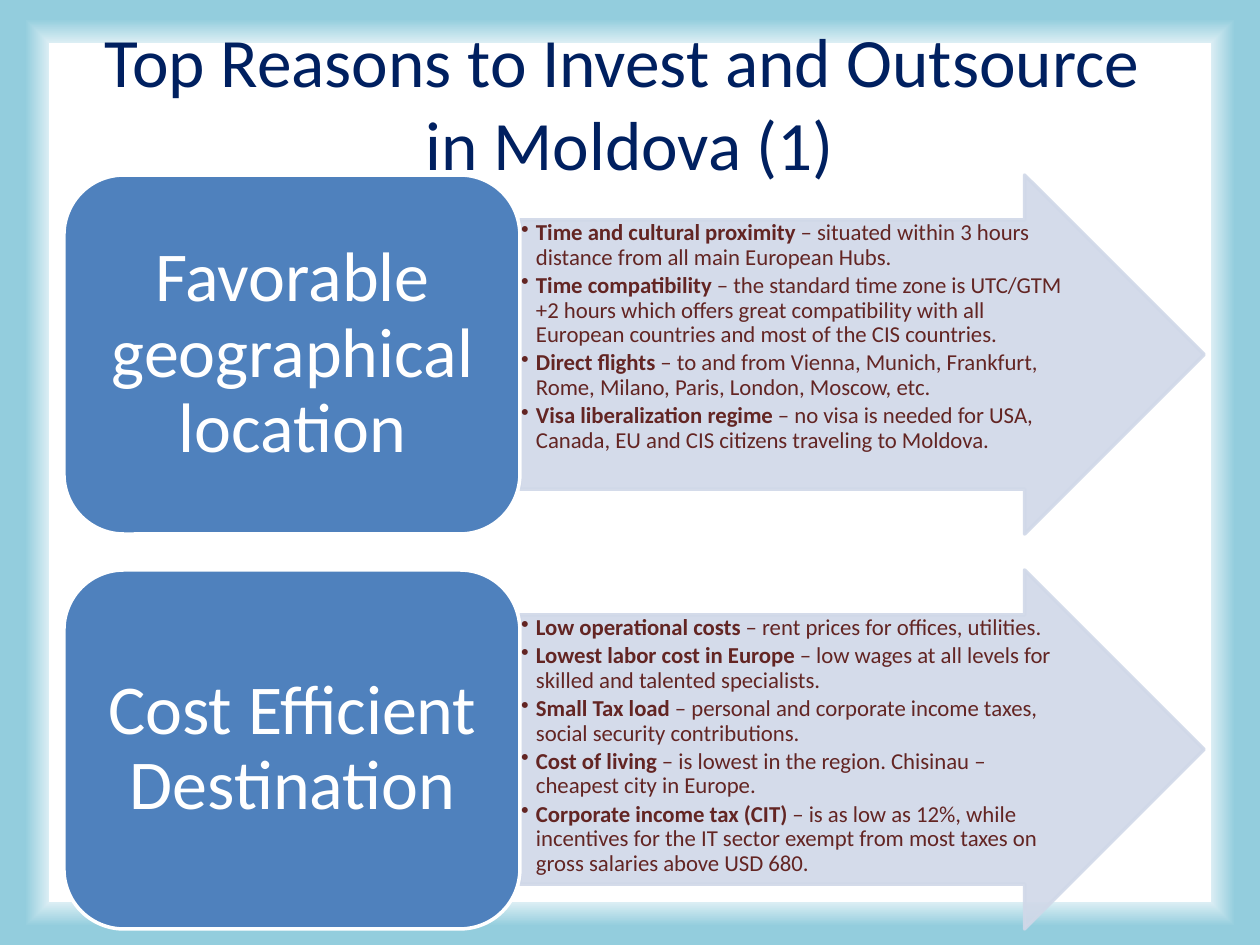
from lxml import etree
from pptx import Presentation
from pptx.dml.color import RGBColor
from pptx.enum.shapes import MSO_SHAPE
from pptx.enum.text import MSO_ANCHOR, MSO_AUTO_SIZE, PP_ALIGN
from pptx.oxml import parse_xml
from pptx.oxml.ns import nsdecls, qn
from pptx.util import Emu, Pt

ARROW, ROUNDED = MSO_SHAPE.RIGHT_ARROW, MSO_SHAPE.ROUNDED_RECTANGLE
MIDDLE, TOP = MSO_ANCHOR.MIDDLE, MSO_ANCHOR.TOP
CENTER = PP_ALIGN.CENTER
NO_FIT = MSO_AUTO_SIZE.NONE

THEME = {
    "font": "Calibri",
    "title": "002060", "label": "FFFFFF", "detail": "632523",
    "box": "4F81BD", "box_line": "FFFFFF", "arrow": "D0D8E8",
    "bg": [(0, "FFFFFF"), (91, "FFFFFF"), (91, "DBEEF4"), (96, "93CDDD"), (100, "93CDDD")],
    "title_size": 39.6, "label_size": 40, "detail_size": 13,
}

REASONS = [
    ("Favorable geographical location", [
        ("Time and cultural proximity", "situated within 3 hours distance from all main European Hubs."),
        ("Time compatibility", "the standard time zone is UTC/GTM +2 hours which offers great compatibility "
         "with all European countries and most of the CIS countries."),
        ("Direct flights", "to and from Vienna, Munich, Frankfurt, Rome, Milano, Paris, London, Moscow, etc."),
        ("Visa liberalization regime", "no visa is needed for USA, Canada, EU and CIS citizens traveling to Moldova."),
    ]),
    ("Cost Efficient Destination", [
        ("Low operational costs", "rent prices for offices, utilities."),
        ("Lowest labor cost in Europe", "low wages at all levels for skilled and talented specialists."),
        ("Small Tax load", "personal and corporate income taxes, social security contributions."),
        ("Cost of living", "is lowest in the region. Chisinau – cheapest city in Europe."),
        ("Corporate income tax (CIT)", "is as low as 12%, while incentives for the IT sector exempt from most "
         "taxes on gross salaries above USD 680."),
    ]),
]


def px(*values):
    return [Emu(round(v * 914400 / 126)) for v in values]


def style(p, role):
    p.font.name = THEME["font"]
    p.font.size = Pt(THEME[role + "_size"])
    p.font.color.rgb = RGBColor.from_string(THEME[role])


prs = Presentation()
prs.slide_width, prs.slide_height = px(1260, 945)
s = prs.slides.add_slide(prs.slide_layouts[5])

stops = "".join(
    f'<a:gs pos="{pos * 1000}"><a:srgbClr val="{color}"/></a:gs>' for pos, color in THEME["bg"])
s.element.cSld.insert(0, parse_xml(
    f'<p:bg {nsdecls("p", "a")}><p:bgPr><a:gradFill rotWithShape="1"><a:gsLst>{stops}</a:gsLst>'
    '<a:path path="shape"><a:fillToRect l="50000" t="50000" r="50000" b="50000"/></a:path>'
    '</a:gradFill><a:effectLst/></p:bgPr></p:bg>'))

title = s.shapes.title
title.left, title.top, title.width, title.height = px(87, 37, 1086, 129)
tf = title.text_frame
tf.text = "Top Reasons to Invest and Outsource \vin Moldova (1)"
tf.auto_size = NO_FIT
tf.vertical_anchor = MIDDLE
p = tf.paragraphs[0]
p.alignment = CENTER
style(p, "title")

for row, (label, details) in enumerate(REASONS):
    top = 175 + row * 395

    arrow = s.shapes.add_shape(ARROW, *px(520, top, 684, 359))
    arrow.adjustments[0], arrow.adjustments[1] = 0.75, 0.5
    box = s.shapes.add_shape(ROUNDED, *px(64, top, 456, 359))
    for sp, fill, line in ((arrow, "arrow", "arrow"), (box, "box", "box_line")):
        sp.shadow.inherit = False
        sp.fill.solid()
        sp.fill.fore_color.rgb = RGBColor.from_string(THEME[fill])
        sp.line.color.rgb = RGBColor.from_string(THEME[line])
        sp.line.width = Pt(2)
    for color in arrow.element.spPr.iter(qn("a:srgbClr")):
        etree.SubElement(color, qn("a:alpha"), val="90000")

    detail_text = s.shapes.add_textbox(*px(520, top + 45, 551, 269))
    label_text = s.shapes.add_textbox(*px(82, top + 18, 421, 323))
    for sp, anchor, side, end in ((detail_text, TOP, 1, 1), (label_text, MIDDLE, 21, 10)):
        tf = sp.text_frame
        tf.word_wrap = True
        tf.vertical_anchor = anchor
        tf.margin_left, tf.margin_right, tf.margin_top, tf.margin_bottom = px(side, side, end, end)

    p = label_text.text_frame.paragraphs[0]
    p.text = label
    p.alignment = CENTER
    p.line_spacing = 0.9
    style(p, "label")

    tf = detail_text.text_frame
    for i, (heading, description) in enumerate(details):
        p = tf.paragraphs[0] if i == 0 else tf.add_paragraph()
        p.level = 1
        p.line_spacing = 0.9
        p.space_after = Pt(2)
        style(p, "detail")
        r = p.add_run()
        r.text = heading
        r.font.bold = True
        p.add_run().text = f" – {description}"
        pPr = p._p.get_or_add_pPr()
        indent = px(15)[0]
        pPr.set("marL", str(indent))
        pPr.set("indent", str(-indent))
        bullet = parse_xml(f'<a:buChar {nsdecls("a")} char="•"/>')
        pPr.find(qn("a:defRPr")).addprevious(bullet)

prs.save("out.pptx")
